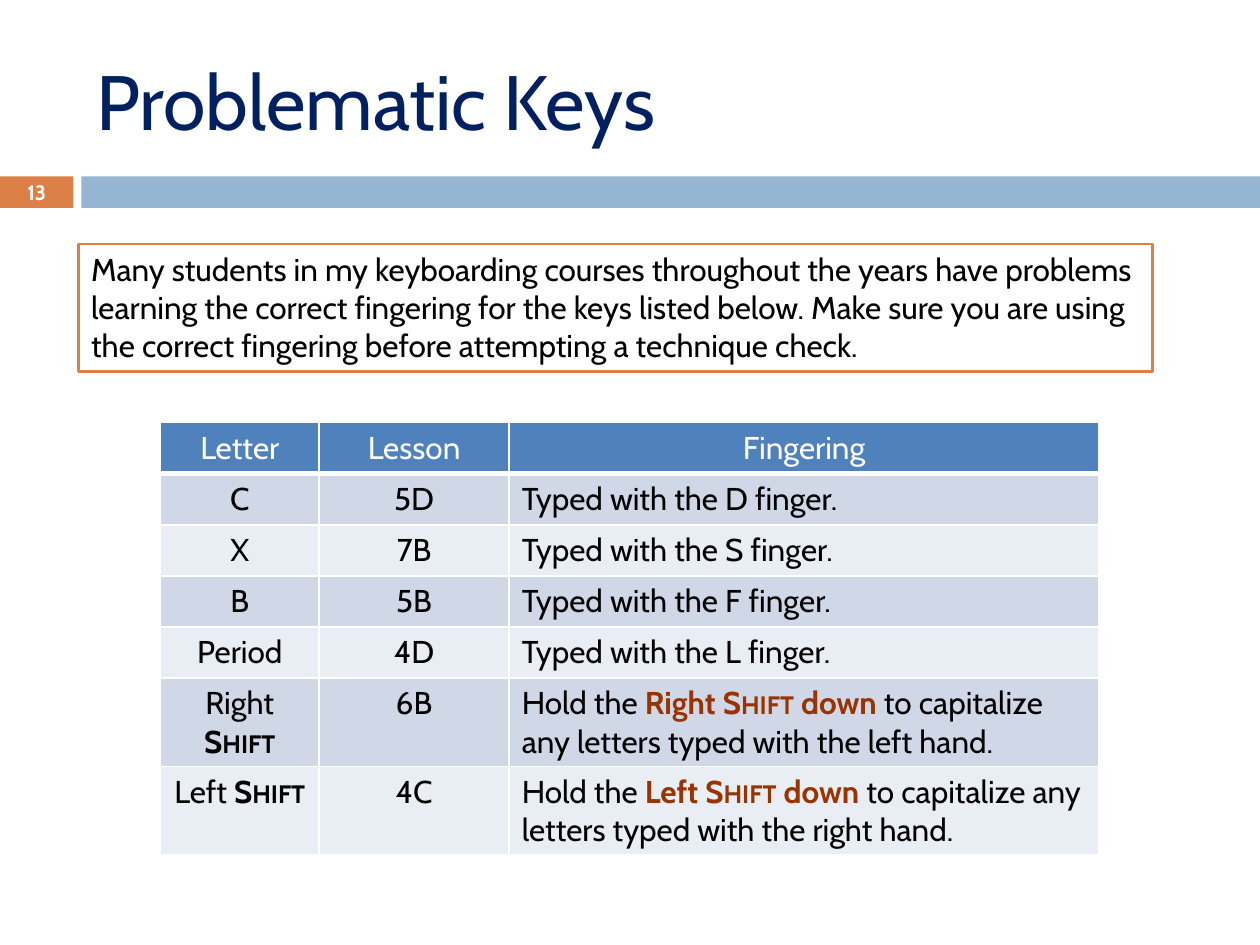
from dataclasses import dataclass

from lxml.etree import SubElement
from pptx import Presentation
from pptx.dml.color import RGBColor
from pptx.enum.shapes import MSO_SHAPE
from pptx.enum.text import MSO_ANCHOR, PP_ALIGN
from pptx.oxml.ns import qn
from pptx.util import Pt


@dataclass(frozen=True)
class Theme:
    font: str = "Cabin"
    title_size: float = 44
    body_size: float = 18
    number_size: float = 11.9
    navy: str = "002060"
    orange: str = "DD8047"
    pale_blue: str = "94B6D2"
    header_blue: str = "4F81BD"
    bands: tuple = ("D0D8E8", "E9EDF4")
    rust: str = "993300"
    black: str = "000000"
    white: str = "FFFFFF"


@dataclass(frozen=True)
class Span:
    """A piece of text with its own emphasis."""
    text: str
    color: str = ""
    bold: bool = False
    small_caps: bool = False


class SlideBuilder:
    def __init__(self, slide, theme):
        self.slide = slide
        self.theme = theme

    def add_spans(self, text_frame, spans, size, color, align=PP_ALIGN.LEFT):
        paragraph = text_frame.paragraphs[0]
        paragraph.alignment = align
        for span in spans:
            run = paragraph.add_run()
            run.text = span.text
            run.font.name = self.theme.font
            run.font.size = Pt(size)
            run.font.bold = span.bold
            run.font.color.rgb = RGBColor.from_string(span.color or color)
            if span.small_caps:
                run._r.get_or_add_rPr().set("cap", "small")

    def rectangle(self, left, top, width, height, fill, line=None):
        shape = self.slide.shapes.add_shape(
            MSO_SHAPE.RECTANGLE, Pt(left), Pt(top), Pt(width), Pt(height))
        shape.shadow.inherit = False
        shape.fill.solid()
        shape.fill.fore_color.rgb = RGBColor.from_string(fill)
        if line:
            shape.line.color.rgb = RGBColor.from_string(line)
            shape.line.width = Pt(1.5)
        else:
            shape.line.fill.background()
        return shape

    def text_box(self, left, top, width, height, span, size, color, align=PP_ALIGN.LEFT):
        box = self.slide.shapes.add_textbox(Pt(left), Pt(top), Pt(width), Pt(height))
        box.text_frame.word_wrap = True
        box.text_frame.vertical_anchor = MSO_ANCHOR.MIDDLE
        self.add_spans(box.text_frame, [span], size, color, align)

    def callout(self, left, top, width, height, text):
        shape = self.rectangle(left, top, width, height, self.theme.white, self.theme.orange)
        shape.text_frame.word_wrap = True
        shape.text_frame.vertical_anchor = MSO_ANCHOR.TOP
        self.add_spans(shape.text_frame, [Span(text)], self.theme.body_size, self.theme.black)

    def cell_borders(self, cell, bottom_width):
        properties = cell._tc.get_or_add_tcPr()
        widths = {"a:lnL": 1, "a:lnR": 1, "a:lnT": 1, "a:lnB": bottom_width}
        for position, (tag, width) in enumerate(widths.items()):
            line = SubElement(properties, qn(tag), w=str(Pt(width)))
            fill = SubElement(line, qn("a:solidFill"))
            SubElement(fill, qn("a:srgbClr"), val=self.theme.white)
            properties.insert(position, line)

    def table(self, left, top, column_widths, row_height, rows):
        """Draw rows of span lists; the first row is the header."""
        theme = self.theme
        table = self.slide.shapes.add_table(
            len(rows), len(column_widths), Pt(left), Pt(top),
            Pt(sum(column_widths)), Pt(row_height * len(rows))).table
        for column, width in zip(table.columns, column_widths):
            column.width = Pt(width)
        for row_index, row in enumerate(rows):
            table.rows[row_index].height = Pt(row_height)
            header = row_index == 0
            fill = theme.header_blue if header else theme.bands[(row_index - 1) % 2]
            color = theme.white if header else theme.black
            for column_index, spans in enumerate(row):
                cell = table.cell(row_index, column_index)
                cell.fill.solid()
                cell.fill.fore_color.rgb = RGBColor.from_string(fill)
                self.cell_borders(cell, 3 if header else 1)
                centred = header or column_index < 2
                self.add_spans(cell.text_frame, spans, theme.body_size, color,
                               PP_ALIGN.CENTER if centred else PP_ALIGN.LEFT)


def plain_row(*texts):
    return [[Span(text)] for text in texts]


def shift_row(side, lesson, opposite_hand, theme):
    return [
        [Span(f"{side} "), Span("Shift", bold=True, small_caps=True)],
        [Span(lesson)],
        [
            Span("Hold the "),
            Span(f"{side} ", theme.rust, True),
            Span("Shift", theme.rust, True, True),
            Span(" down ", theme.rust, True),
            Span(f"to capitalize any letters typed with the {opposite_hand} hand."),
        ],
    ]


def main():
    theme = Theme()
    presentation = Presentation()
    presentation.slide_width, presentation.slide_height = Pt(720), Pt(540)
    builder = SlideBuilder(
        presentation.slides.add_slide(presentation.slide_layouts[6]), theme)

    builder.rectangle(0, 100.8, 42, 18, theme.orange)
    builder.rectangle(46.5, 100.8, 673.5, 18, theme.pale_blue)
    builder.text_box(48, 18, 642, 78, Span("Problematic Keys"),
                     theme.title_size, theme.navy)
    builder.text_box(0, 100, 42, 19.5, Span("13", bold=True),
                     theme.number_size, theme.white, PP_ALIGN.CENTER)

    letter_keys = [("C", "5D", "D"), ("X", "7B", "S"), ("B", "5B", "F"), ("Period", "4D", "L")]
    rows = [plain_row("Letter", "Lesson", "Fingering")]
    rows += [plain_row(key, lesson, f"Typed with the {finger} finger.")
             for key, lesson, finger in letter_keys]
    rows += [shift_row("Right", "6B", "left", theme), shift_row("Left", "4C", "right", theme)]
    builder.table(91.75, 241.5, [90.5, 108.75, 337], 29.2, rows)

    builder.callout(
        45, 139.5, 613.5, 72.7,
        "Many students in my keyboarding courses throughout the years have problems "
        "learning the correct fingering for the keys listed below. Make sure you are "
        "using the correct fingering before attempting a technique check.")

    presentation.save("out.pptx")


if __name__ == "__main__":
    main()
